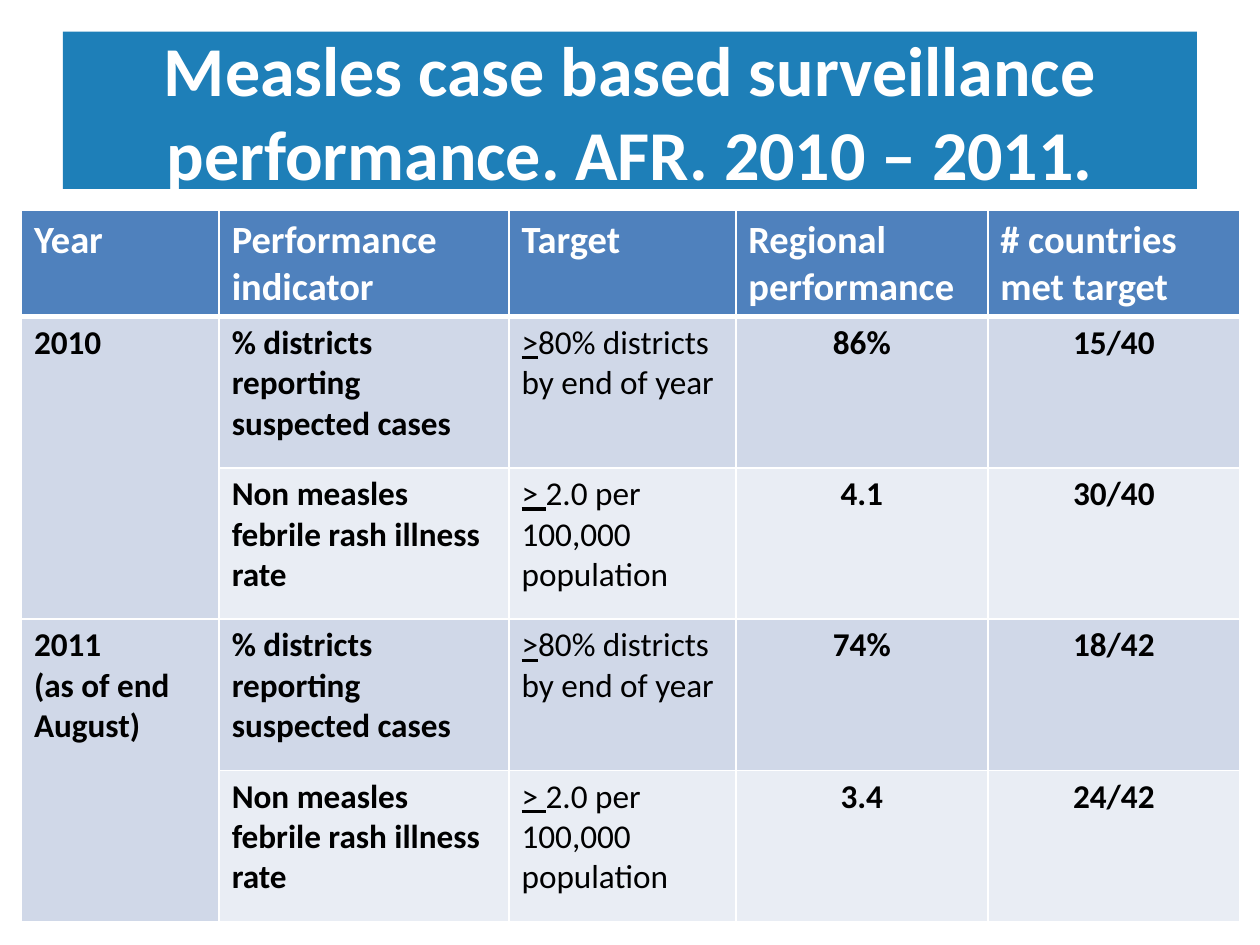
from dataclasses import dataclass

from lxml import etree
from pptx import Presentation
from pptx.dml.color import RGBColor
from pptx.enum.shapes import MSO_SHAPE
from pptx.enum.text import MSO_ANCHOR, PP_ALIGN
from pptx.oxml.ns import qn
from pptx.util import Inches, Pt

RECTANGLE = MSO_SHAPE.RECTANGLE
MIDDLE = MSO_ANCHOR.MIDDLE
LEFT, CENTER = PP_ALIGN.LEFT, PP_ALIGN.CENTER


@dataclass(frozen=True)
class Theme:
    font: str = "Calibri"
    banner: str = "1E7FB8"
    header: str = "4F81BD"
    bands: tuple = ("D0D8E8", "E9EDF4")
    light: str = "FFFFFF"
    dark: str = "000000"
    title_size: int = 40
    header_size: int = 22
    body_size: int = 19
    border: int = 1
    header_border: int = 3


THEME = Theme()
TITLE = "Measles case based surveillance performance. AFR. 2010 – 2011."
HEADERS = ["Year", "Performance indicator", "Target",
           "Regional performance", "# countries met target"]
# Each indicator: name, underlined sign, rest of the target
INDICATORS = [
    ("% districts reporting suspected cases", ">", "80% districts by end of year"),
    ("Non measles febrile rash illness rate", "> ", "2.0 per 100,000 population"),
]
# Each year: label lines, then regional performance and countries per indicator
YEARS = [
    (["2010"], [("86%", "15/40"), ("4.1", "30/40")]),
    (["2011", "(as of end August)"], [("74%", "18/42"), ("3.4", "24/42")]),
]
COLUMN_WIDTHS = [1.57, 2.3, 1.8, 2, 2]
ROW_HEIGHTS = [0.84] + [1.2] * 4


def add_span(para, text, size, color, **formats):
    span = para.add_run()
    span.text = text
    values = {"name": THEME.font, "size": Pt(size), "bold": True, **formats}
    for name, value in values.items():
        setattr(span.font, name, value)
    span.font.color.rgb = RGBColor.from_string(color)


def paint(target, color):
    target.fill.solid()
    target.fill.fore_color.rgb = RGBColor.from_string(color)


def add_title(slide):
    box = slide.shapes.add_shape(RECTANGLE, Inches(0.5), Inches(0.25),
                                 Inches(9), Inches(1.25))
    box.shadow.inherit = False
    paint(box, THEME.banner)
    box.line.fill.background()
    frame = box.text_frame
    frame.word_wrap = True
    frame.vertical_anchor = MIDDLE
    para = frame.paragraphs[0]
    para.alignment = CENTER
    add_span(para, TITLE, THEME.title_size, THEME.light)


def set_borders(cell, top, bottom):
    """Draw light borders; top and bottom widths are in points."""
    properties = cell._tc.get_or_add_tcPr()
    widths = {"lnL": THEME.border, "lnR": THEME.border, "lnT": top, "lnB": bottom}
    for side, width in widths.items():
        line = etree.SubElement(properties, qn(f"a:{side}"), w=str(Pt(width)))
        fill = etree.SubElement(line, qn("a:solidFill"))
        etree.SubElement(fill, qn("a:srgbClr"), val=THEME.light)


def style_cell(cell, row):
    top = THEME.header_border if row == 1 else THEME.border
    bottom = THEME.header_border if row == 0 else THEME.border
    set_borders(cell, top, bottom)
    paint(cell, THEME.header if row == 0 else THEME.bands[(row - 1) % 2])


def write_cell(cell, lines, size=THEME.body_size, color=THEME.dark, align=LEFT):
    frame = cell.text_frame
    for index, text in enumerate(lines):
        para = frame.add_paragraph() if index else frame.paragraphs[0]
        para.alignment = align
        add_span(para, text, size, color)


def write_target(cell, sign, rest):
    para = cell.text_frame.paragraphs[0]
    for text, underline in ((sign, True), (rest, False)):
        add_span(para, text, THEME.body_size, THEME.dark,
                 bold=False, underline=underline)


def fill_year(table, first_row, label, results):
    year = table.cell(first_row, 0)
    year.merge(table.cell(first_row + len(results) - 1, 0))
    write_cell(year, label)
    for row, (indicator, values) in enumerate(zip(INDICATORS, results), first_row):
        name, sign, rest = indicator
        write_cell(table.cell(row, 1), [name])
        write_target(table.cell(row, 2), sign, rest)
        for column, value in enumerate(values, 3):
            write_cell(table.cell(row, column), [value], align=CENTER)


def add_performance_table(slide):
    table = slide.shapes.add_table(
        len(ROW_HEIGHTS), len(COLUMN_WIDTHS), Inches(0.17), Inches(1.67),
        Inches(sum(COLUMN_WIDTHS)), Inches(sum(ROW_HEIGHTS))).table
    for column, width in zip(table.columns, COLUMN_WIDTHS):
        column.width = Inches(width)
    for index, height in enumerate(ROW_HEIGHTS):
        table.rows[index].height = Inches(height)
        for cell in table.rows[index].cells:
            style_cell(cell, index)
    for column, text in enumerate(HEADERS):
        write_cell(table.cell(0, column), [text], THEME.header_size, THEME.light)
    for index, (label, results) in enumerate(YEARS):
        fill_year(table, 1 + index * len(INDICATORS), label, results)


def main():
    deck = Presentation()
    deck.slide_width, deck.slide_height = Inches(10), Inches(7.5)
    slide = deck.slides.add_slide(deck.slide_layouts[6])
    add_title(slide)
    add_performance_table(slide)
    deck.save("out.pptx")


if __name__ == "__main__":
    main()
